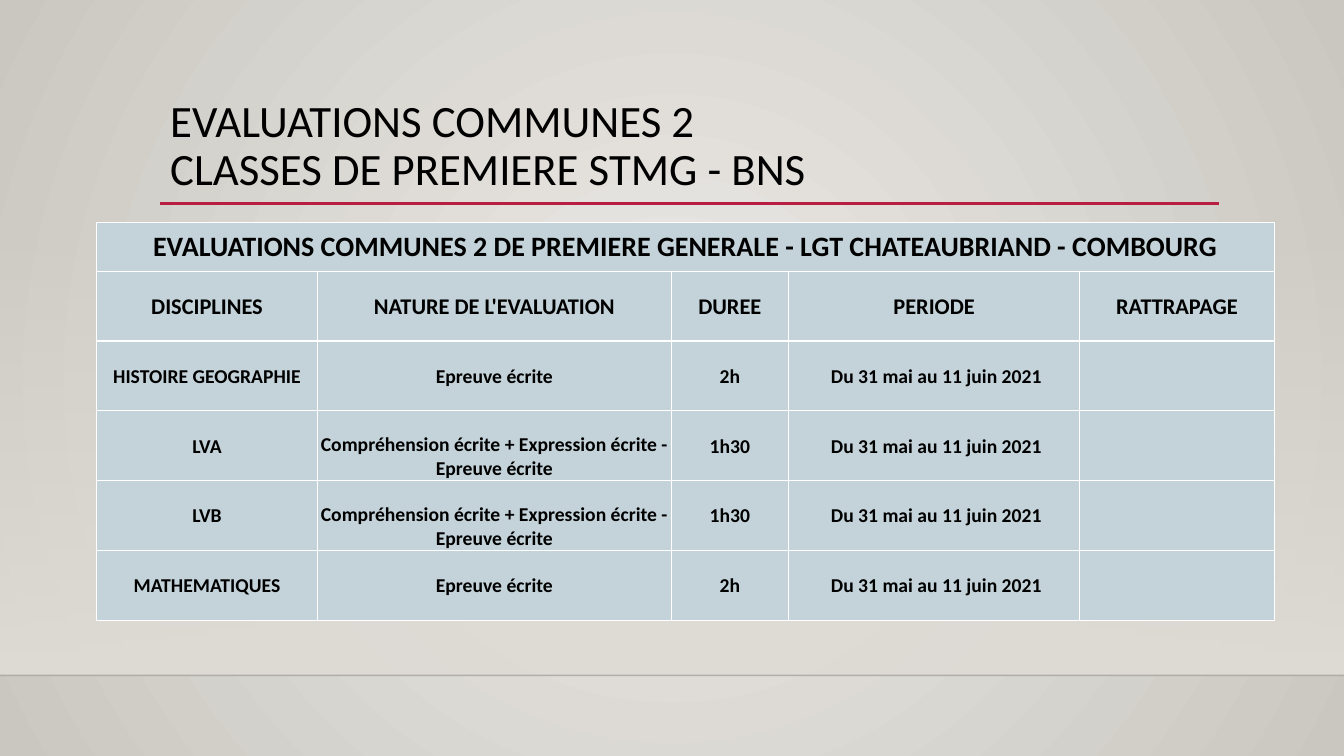
import pptx
import pptx.util
import pptx.dml.color
import pptx.enum.shapes
import pptx.enum.text
import pptx.oxml
import pptx.oxml.ns

Pt = pptx.util.Pt
ANCHOR = pptx.enum.text.MSO_ANCHOR
ALIGN = pptx.enum.text.PP_ALIGN

TITLE = ["EVALUATIONS COMMUNES 2", "CLASSES DE PREMIERE STMG - BNS"]
TABLE_TITLE = "EVALUATIONS COMMUNES 2 DE PREMIERE GENERALE - LGT CHATEAUBRIAND - COMBOURG"
HEADERS = ["DISCIPLINES", "NATURE DE L'EVALUATION", "DUREE", "PERIODE", "RATTRAPAGE"]
WRITTEN = "Epreuve écrite"
LANGUAGE = "Compréhension écrite + Expression écrite - Epreuve écrite"
PERIOD = " Du 31 mai au 11 juin 2021"
EXAMS = [
    ("HISTOIRE GEOGRAPHIE", WRITTEN, "2h"),
    ("LVA", LANGUAGE, "1h30"),
    ("LVB", LANGUAGE, "1h30"),
    ("MATHEMATIQUES", WRITTEN, "2h"),
]
THEME = {
    "font": "Calibri", "text": "000000", "accent": "B71E42", "cell": "C3D3D9",
    "border": "FFFFFF", "floor": "000001", "wall": "DFDBD5",
    "glow": "ECEAE7", "edge": "CAC7C1",
    "title": 32, "banner": 20, "header": 16, "body": 14,
}
SLIDE_W, SLIDE_H = 960, 540
WALL_TOP, FLOOR_Y = 159, 482.4
RULE_LEFT, RULE_RIGHT, RULE_Y = 114.5, 871, 145.25
TITLE_BOX = (114.5, 63.4, 756, 82.8)
TABLE_LEFT, TABLE_TOP = 69, 159
COLUMN_WIDTHS = [157.8, 252.8, 83.6, 208.2, 138.8]
BANNER_H, ROW_H = 34.7, 49.9
CELL_INSET = 0.75
NS = pptx.oxml.ns.nsdecls("a", "p")


def rgb(name):
    return pptx.dml.color.RGBColor.from_string(THEME[name])


def gradient(stops, direction):
    gs = "".join(
        f'<a:gs pos="{pos}"><a:srgbClr val="{THEME[color]}"><a:alpha val="{alpha}"/></a:srgbClr></a:gs>'
        for pos, color, alpha in stops)
    return f'<a:gradFill {NS} rotWithShape="1"><a:gsLst>{gs}</a:gsLst>{direction}</a:gradFill>'


def write(tf, lines, size, bold=False, align=ALIGN.LEFT, spacing=None):
    p = tf.paragraphs[0]
    p.alignment = align
    if spacing:
        p.line_spacing = spacing
    for i, line in enumerate(lines):
        if i:
            p.add_line_break()
        r = p.add_run()
        r.text = line
        r.font.name = THEME["font"]
        r.font.size = Pt(THEME[size])
        r.font.bold = bold
        r.font.color.rgb = rgb("text")


def add_line(slide, x1, x2, y, color, width, opacity=100):
    line = slide.shapes.add_connector(
        pptx.enum.shapes.MSO_CONNECTOR.STRAIGHT, Pt(x1), Pt(y), Pt(x2), Pt(y))
    line.line.color.rgb = rgb(color)
    line.line.width = Pt(width)
    if opacity < 100:
        clr = line.line._ln.find(".//" + pptx.oxml.ns.qn("a:srgbClr"))
        clr.append(pptx.oxml.parse_xml(f'<a:alpha {NS} val="{opacity * 1000}"/>'))
    line._element.spPr.append(pptx.oxml.parse_xml(f"<a:effectLst {NS}/>"))


def style_cell(cell):
    tcPr = cell._tc.get_or_add_tcPr()
    for side in ("lnL", "lnR", "lnT", "lnB"):
        tcPr.append(pptx.oxml.parse_xml(
            f'<a:{side} {NS} w="{Pt(1)}"><a:solidFill><a:srgbClr val="{THEME["border"]}"/>'
            f"</a:solidFill></a:{side}>"))
    cell.fill.solid()
    cell.fill.fore_color.rgb = rgb("cell")
    cell.margin_left = cell.margin_right = cell.margin_top = Pt(CELL_INSET)
    cell.margin_bottom = 0


def add_backdrop(slide):
    radial = ('<a:path path="circle"><a:fillToRect l="50000" t="50000" '
              'r="50000" b="50000"/></a:path>')
    fill = gradient([(0, "glow", 100000), (100000, "edge", 100000)], radial)
    slide._element.cSld.insert(0, pptx.oxml.parse_xml(
        f"<p:bg {NS}><p:bgPr>{fill}<a:effectLst/></p:bgPr></p:bg>"))
    wall = slide.shapes.add_shape(
        pptx.enum.shapes.MSO_SHAPE.RECTANGLE,
        0, Pt(WALL_TOP), Pt(SLIDE_W), Pt(FLOOR_Y - WALL_TOP))
    wall.shadow.inherit = False
    wall.line.fill.background()
    fade = gradient([(0, "wall", 0), (100000, "wall", 100000)],
                    '<a:lin ang="5400000" scaled="0"/>')
    wall._element.spPr.prstGeom.addnext(pptx.oxml.parse_xml(fade))
    add_line(slide, 0, SLIDE_W, FLOOR_Y, "floor", 1, opacity=20)
    add_line(slide, RULE_LEFT, RULE_RIGHT, RULE_Y, "accent", 2.5)


def add_title(slide):
    tf = slide.shapes.add_textbox(*map(Pt, TITLE_BOX)).text_frame
    tf.word_wrap = True
    tf.vertical_anchor = ANCHOR.MIDDLE
    write(tf, TITLE, "title", spacing=0.9)


def add_exam_table(slide):
    rows = [[TABLE_TITLE], HEADERS] + [[*exam, PERIOD] for exam in EXAMS]
    heights = [BANNER_H] + [ROW_H] * (len(rows) - 1)
    sizes = ["banner", "header"] + ["body"] * len(EXAMS)
    table = slide.shapes.add_table(
        len(rows), len(HEADERS), Pt(TABLE_LEFT), Pt(TABLE_TOP),
        Pt(sum(COLUMN_WIDTHS)), Pt(sum(heights))).table
    table.first_row = table.horz_banding = False
    for column, width in zip(table.columns, COLUMN_WIDTHS):
        column.width = Pt(width)
    for row, height in zip(table.rows, heights):
        row.height = Pt(height)
    for cell in table.iter_cells():
        style_cell(cell)
    table.cell(0, 0).merge(table.cell(0, len(HEADERS) - 1))
    for i, texts in enumerate(rows):
        for j, text in enumerate(texts):
            cell = table.cell(i, j)
            cell.vertical_anchor = ANCHOR.BOTTOM if text == LANGUAGE else ANCHOR.MIDDLE
            write(cell.text_frame, [text], sizes[i], bold=True, align=ALIGN.CENTER)


def main():
    prs = pptx.Presentation()
    prs.slide_width, prs.slide_height = Pt(SLIDE_W), Pt(SLIDE_H)
    slide = prs.slides.add_slide(prs.slide_layouts[6])
    add_backdrop(slide)
    add_title(slide)
    add_exam_table(slide)
    prs.save("out.pptx")


if __name__ == "__main__":
    main()
